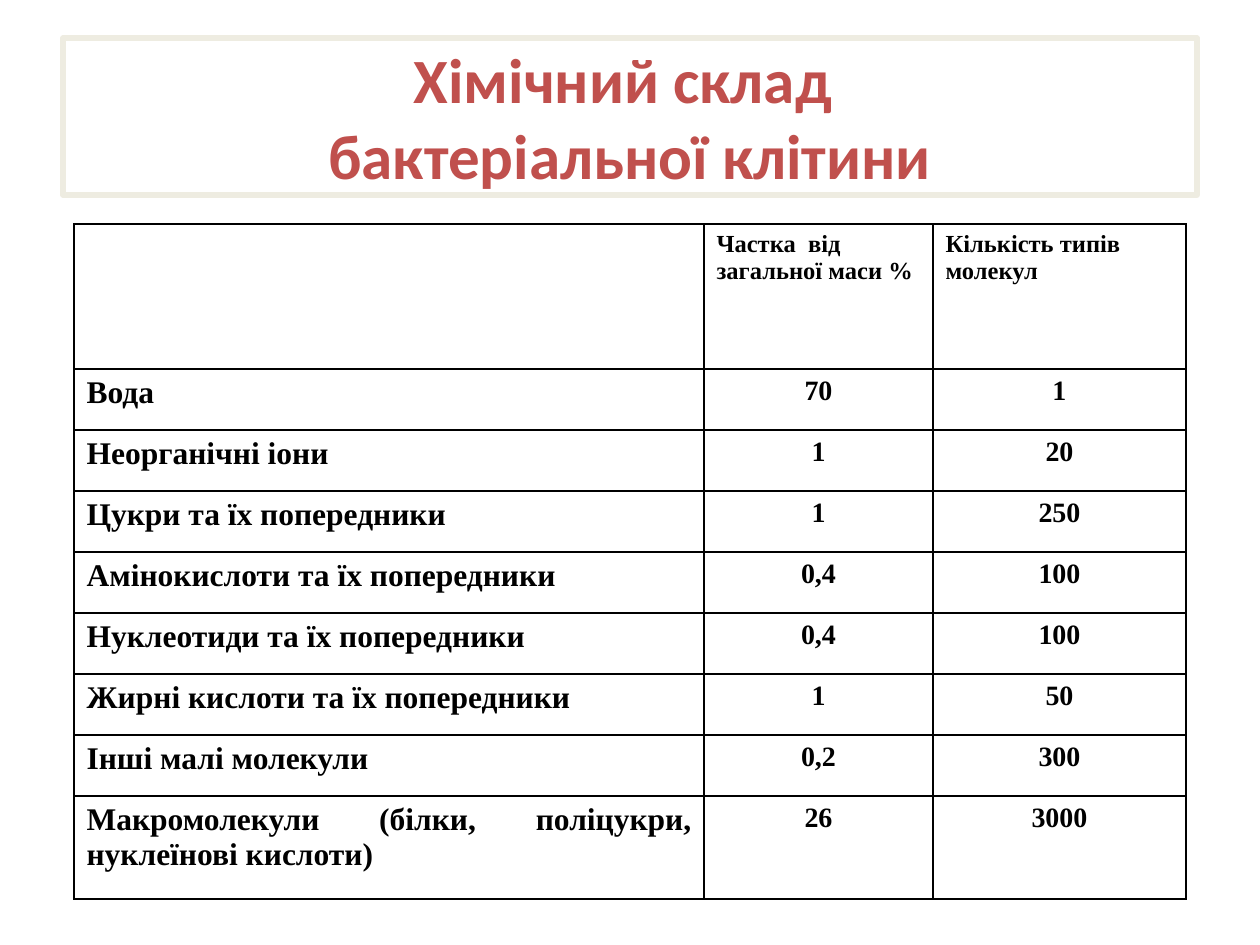
from dataclasses import dataclass

from lxml.etree import SubElement
from pptx import Presentation
from pptx.dml.color import RGBColor
from pptx.enum.text import MSO_ANCHOR, MSO_AUTO_SIZE, PP_ALIGN
from pptx.oxml.ns import qn
from pptx.util import Pt

EMU_PER_PX = 914400 / 126


@dataclass(frozen=True)
class Theme:
    heading_font: str = "Calibri"
    body_font: str = "Times New Roman"
    heading: str = "C0504D"
    frame: str = "EEECE1"
    ink: str = "000000"
    paper: str = "FFFFFF"
    heading_size: int = 36
    header_size: int = 14
    component_size: int = 18
    value_size: int = 16
    frame_width: int = 3
    grid_width: int = 1


THEME = Theme()
HEADING = "Хімічний склад \vбактеріальної клітини"
HEADERS = ("", "Частка  від загальної маси %", "Кількість типів молекул")
COMPONENTS = (
    ("Вода ", "70", "1"),
    ("Неорганічні іони", "1", "20"),
    ("Цукри та їх попередники", "1", "250"),
    ("Амінокислоти та їх попередники", "0,4", "100"),
    ("Нуклеотиди та їх попередники", "0,4", "100"),
    ("Жирні кислоти та їх попередники", "1", "50"),
    ("Інші малі молекули", "0,2", "300"),
    ("Макромолекули (білки, поліцукри, нуклеїнові кислоти)", "26", "3000"),
)
COLUMN_WIDTHS = (630, 229, 253)
ROW_HEIGHTS = (145, *[61] * 7, 103)


def px(length):
    return round(length * EMU_PER_PX)


def write(frame, text, *, size, font=THEME.body_font, color=THEME.ink, align=None):
    paragraph = frame.paragraphs[0]
    paragraph.text = text
    paragraph.alignment = align
    for run in paragraph.runs:
        run.font.name = font
        run.font.size = Pt(size)
        run.font.bold = True
        run.font.color.rgb = RGBColor.from_string(color)


def add_borders(cell):
    properties = cell._tc.get_or_add_tcPr()
    for side in ("a:lnL", "a:lnR", "a:lnT", "a:lnB"):
        border = SubElement(properties, qn(side), w=str(Pt(THEME.grid_width)))
        fill = SubElement(border, qn("a:solidFill"))
        SubElement(fill, qn("a:srgbClr"), val=THEME.ink)


def place_heading(slide, left, top, width, height):
    heading = slide.shapes.title
    heading.left, heading.top = px(left), px(top)
    heading.width, heading.height = px(width), px(height)
    heading.fill.solid()
    heading.fill.fore_color.rgb = RGBColor.from_string(THEME.paper)
    heading.line.color.rgb = RGBColor.from_string(THEME.frame)
    heading.line.width = Pt(THEME.frame_width)
    SubElement(heading.line._get_or_add_ln(), qn("a:round"))
    frame = heading.text_frame
    frame.auto_size = MSO_AUTO_SIZE.NONE
    frame.word_wrap = True
    frame.vertical_anchor = MSO_ANCHOR.MIDDLE
    write(frame, HEADING, size=THEME.heading_size, font=THEME.heading_font,
          color=THEME.heading, align=PP_ALIGN.CENTER)


def cell_format(row, column):
    if row == 0:
        return {"size": THEME.header_size}
    if column == 0:
        return {"size": THEME.component_size, "align": PP_ALIGN.JUSTIFY}
    return {"size": THEME.value_size, "align": PP_ALIGN.CENTER}


def place_composition(slide, left, top):
    rows = (HEADERS, *COMPONENTS)
    composition = slide.shapes.add_table(
        len(rows), len(HEADERS), px(left), px(top),
        px(sum(COLUMN_WIDTHS)), px(sum(ROW_HEIGHTS))).table
    composition.first_row = False
    composition.horz_banding = False
    for column, width in zip(composition.columns, COLUMN_WIDTHS):
        column.width = px(width)
    for row, height in zip(composition.rows, ROW_HEIGHTS):
        row.height = px(height)
    for r, entries in enumerate(rows):
        for c, entry in enumerate(entries):
            cell = composition.cell(r, c)
            add_borders(cell)
            cell.fill.solid()
            cell.fill.fore_color.rgb = RGBColor.from_string(THEME.paper)
            write(cell.text_frame, entry, **cell_format(r, c))


def main():
    presentation = Presentation()
    presentation.slide_width, presentation.slide_height = px(1260), px(945)
    slide = presentation.slides.add_slide(presentation.slide_layouts[5])
    place_heading(slide, 63, 38, 1134, 157)
    place_composition(slide, 74, 224)
    presentation.save("out.pptx")


if __name__ == "__main__":
    main()
